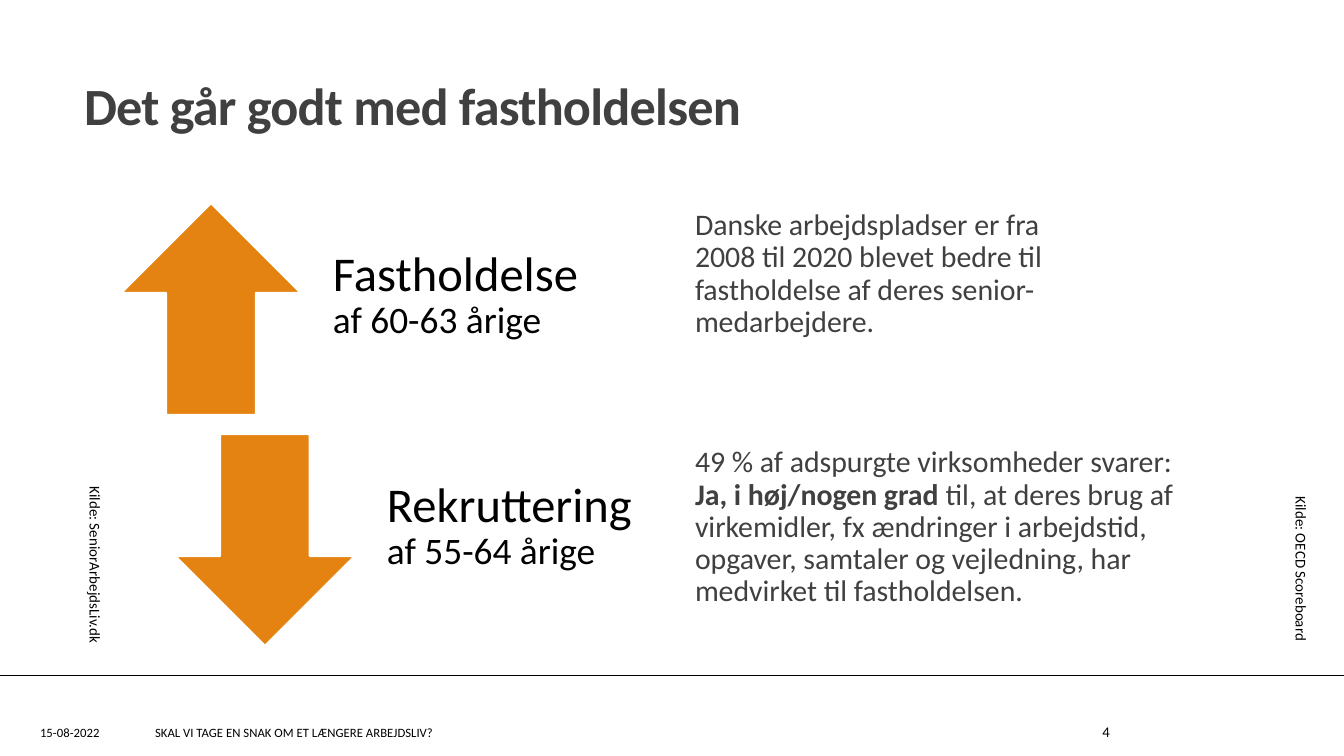
import pptx
import pptx.util
import pptx.dml.color
import pptx.enum.shapes
import pptx.enum.text
from lxml import etree

# Content
TITLE = "Det går godt med fastholdelsen"
TRENDS = [
    ("UP_ARROW", "Fastholdelse ", "af 60-63 årige"),
    ("DOWN_ARROW", "Rekruttering ", "af 55-64 årige"),
]
FINDINGS = [
    [("Danske arbejdspladser er fra\v2008 til 2020 blevet bedre til\v"
      "fastholdelse af deres senior-\vmedarbejdere.", {})],
    [("49 % af adspurgte virksomheder svarer:\v", {}),
     ("Ja, i høj/nogen grad ", {"bold": True}),
     ("til, at deres brug af virkemidler, fx ændringer i arbejdstid, opgaver, "
      "samtaler og vejledning, har medvirket til fastholdelsen.", {})],
]
SOURCES = [  # text, frame before rotation
    ("Kilde: SeniorArbejdsLiv.dk", (-7, 542, 187, 50)),
    ("Kilde: OECD Scoreboard", (1215, 554, 173, 32)),
]
FOOTERS = [  # text, left, width, size name, alignment
    ("15-08-2022", 27, 106, "footer", "LEFT"),
    ("SKAL VI TAGE EN SNAK OM ET LÆNGERE ARBEJDSLIV?", 142, 402, "footer", "LEFT"),
    ("4", 978, 145, "page", "RIGHT"),
]

THEME = {
    "font": "Calibri",
    "colors": {"accent": "E48312", "heading": "404040", "text": "000000", "paper": "FFFFFF"},
    "sizes": {"title": 28, "trend": 26, "group": 20, "body": 16,
              "source": 8, "page": 7.9, "footer": 6.8},
}

# Layout in px
SLIDE_W, SLIDE_H = 1344, 756
TREND_LEFT, TREND_TOP = 121, 203
TREND_DX, TREND_DY = 54, 231
ARROW_W, TREND_H = 180, 212
LABEL_DX, LABEL_W = 185, 305
RULE_Y = 675
EMU_PER_PX = 914400 * 10 / SLIDE_W


def px(length):
    return pptx.util.Emu(round(length * EMU_PER_PX))


def color(name):
    return pptx.dml.color.RGBColor.from_string(THEME["colors"][name])


def add_text(slide, paragraphs, frame, size="body", ink="text", bold=False, anchor="TOP",
             align="LEFT", insets=(13, 7, 13, 7), leading=None, gap=0, wrap=True,
             rotation=0, tracking=None):
    """Each paragraph is a list of (text, {size, bold}) runs."""
    box = slide.shapes.add_textbox(*map(px, frame))
    box.rotation = rotation
    body = box.text_frame
    body.word_wrap = wrap
    body.vertical_anchor = pptx.enum.text.MSO_ANCHOR[anchor]
    (body.margin_left, body.margin_top,
     body.margin_right, body.margin_bottom) = map(px, insets)
    for index, runs in enumerate(paragraphs):
        paragraph = body.add_paragraph() if index else body.paragraphs[0]
        paragraph.alignment = pptx.enum.text.PP_ALIGN[align]
        if leading:
            paragraph.line_spacing = leading
        if index:
            paragraph.space_before = pptx.util.Pt(gap)
        for text, style in runs:
            for part, line in enumerate(text.split("\v")):
                if part:
                    paragraph.add_line_break()
                if not line:
                    continue
                run = paragraph.add_run()
                run.text = line
                run.font.name = THEME["font"]
                run.font.size = pptx.util.Pt(THEME["sizes"][style.get("size", size)])
                run.font.bold = style.get("bold", bold)
                run.font.color.rgb = color(ink)
                if tracking:
                    run.font._element.set("spc", str(round(tracking * 100)))
    return box


def main():
    deck = pptx.Presentation()
    deck.slide_width, deck.slide_height = px(SLIDE_W), px(SLIDE_H)
    slide = deck.slides.add_slide(deck.slide_layouts[6])

    # Footer rule
    rule = slide.shapes.add_connector(pptx.enum.shapes.MSO_CONNECTOR.STRAIGHT,
                                      px(0), px(RULE_Y), px(SLIDE_W), px(RULE_Y))
    rule.line.color.rgb = color("text")
    rule.line.width = pptx.util.Pt(0.25)
    etree.SubElement(rule._element.spPr, pptx.oxml.ns.qn("a:effectLst"))

    # Title
    add_text(slide, [[(TITLE, {})]], (71, 74, 1109, 71), size="title", ink="heading",
             bold=True, anchor="MIDDLE", leading=0.85, tracking=-0.4)

    # Arrows with their labels, each step down and to the right
    for step, (direction, trend, group) in enumerate(TRENDS):
        left, top = TREND_LEFT + step * TREND_DX, TREND_TOP + step * TREND_DY
        arrow = slide.shapes.add_shape(pptx.enum.shapes.MSO_SHAPE[direction],
                                       px(left), px(top), px(ARROW_W), px(TREND_H))
        arrow.shadow.inherit = False
        arrow.fill.solid()
        arrow.fill.fore_color.rgb = color("accent")
        arrow.line.color.rgb = color("paper")
        arrow.line.width = pptx.util.Pt(1.25)
        add_text(slide, [[(trend, {}), (group, {"size": "group"})]],
                 (left + LABEL_DX, top, LABEL_W, TREND_H), size="trend",
                 anchor="MIDDLE", insets=(27, 0, 27, 27), leading=0.9)

    # Findings
    add_text(slide, FINDINGS, (685, TREND_TOP, 544, 444), ink="heading",
             insets=(10, 7, 0, 7), leading=0.9, gap=58)

    # Sources, reading downwards along both edges
    for source, frame in SOURCES:
        add_text(slide, [[(source, {})]], frame, size="source", wrap=False, rotation=90)

    # Footer
    for footer, left, width, size, align in FOOTERS:
        add_text(slide, [[(footer, {})]], (left, 712, width, 40), size=size,
                 anchor="MIDDLE", align=align)

    deck.save("out.pptx")


if __name__ == "__main__":
    main()
